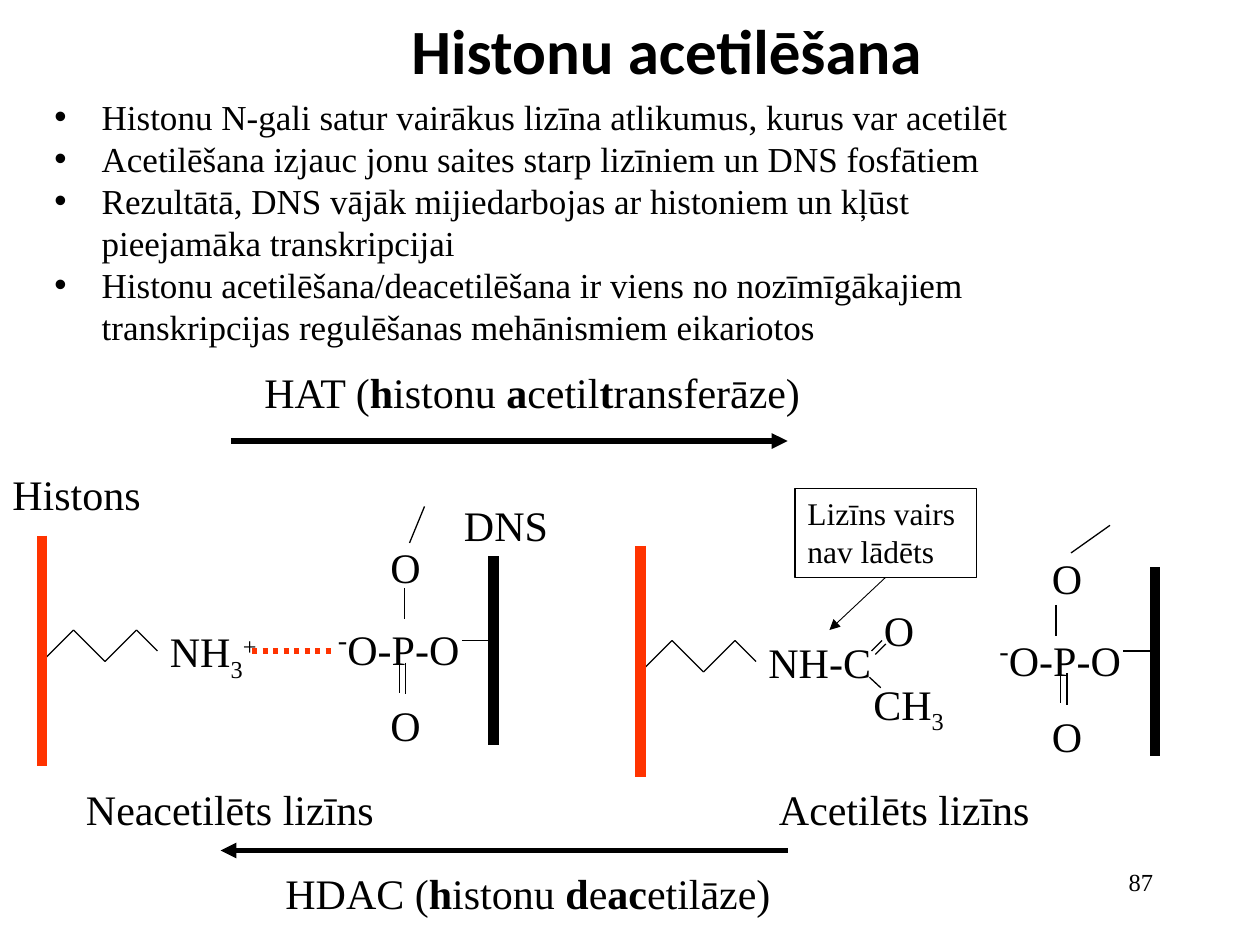
"""Build the slide on histone acetylation and deacetylation."""
from dataclasses import dataclass
from itertools import pairwise

from lxml import etree
from pptx import Presentation
from pptx.dml.color import RGBColor
from pptx.enum import dml, shapes, text
from pptx.oxml import ns
from pptx.util import Pt

COLORS = {"ink": "000000", "histone": "FF3300"}
SERIF = "Times New Roman"


@dataclass(frozen=True)
class Span:
    text: str
    bold: bool = False
    baseline: int = 0
    size: float | None = None


@dataclass(frozen=True)
class Paragraph:
    spans: tuple[Span, ...]
    left: float = 0
    hanging: float = 0
    before: float = 0


@dataclass(frozen=True)
class Label:
    box: tuple[float, float, float, float]
    spans: tuple[Span, ...]


@dataclass(frozen=True)
class Bond:
    start: tuple[float, float]
    end: tuple[float, float]


@dataclass(frozen=True)
class Phosphate:
    dx: float
    dy: float
    upper_bond: Bond
    backbone_bond: Bond


def plain(words: str) -> tuple[Span, ...]:
    return (Span(words),)


def emphasised(words: str) -> tuple[Span, ...]:
    """Split on asterisks, making every second piece bold."""
    return tuple(Span(piece, bold=i % 2 == 1) for i, piece in enumerate(words.split("*")))


def write(frame, paragraphs, *, size=24, font=SERIF, bold=False,
          align=text.PP_ALIGN.LEFT, anchor=text.MSO_ANCHOR.TOP) -> None:
    """Fill a text frame with formatted paragraphs."""
    frame.word_wrap = True
    frame.vertical_anchor = anchor
    for i, item in enumerate(paragraphs):
        paragraph = frame.add_paragraph() if i else frame.paragraphs[0]
        properties = paragraph._p.get_or_add_pPr()
        if item.left:
            properties.set("marL", str(Pt(item.left)))
        if item.hanging:
            properties.set("indent", str(-Pt(item.hanging)))
            etree.SubElement(properties, ns.qn("a:buFont"), typeface="Arial")
            etree.SubElement(properties, ns.qn("a:buChar"), char="•")
        paragraph.alignment = align
        paragraph.space_before = Pt(item.before)
        for span in item.spans:
            run = paragraph.add_run()
            run.text = span.text
            run.font.name = font
            run.font.size = Pt(span.size or size)
            run.font.bold = bold or span.bold
            run.font.color.rgb = RGBColor.from_string(COLORS["ink"])
            if span.baseline:
                run._r.get_or_add_rPr().set("baseline", str(span.baseline * 1000))


def add_text(slide, box, paragraphs, **format_options) -> None:
    textbox = slide.shapes.add_textbox(*map(Pt, box))
    write(textbox.text_frame, paragraphs, **format_options)


def add_line(slide, bond: Bond, width: float = 0.75, color: str = "ink",
             dotted: bool = False, arrow: bool = False) -> None:
    connector = slide.shapes.add_connector(
        shapes.MSO_CONNECTOR.STRAIGHT, *map(Pt, (*bond.start, *bond.end)))
    connector.line.width = Pt(width)
    connector.line.color.rgb = RGBColor.from_string(COLORS[color])
    if dotted:
        connector.line.dash_style = dml.MSO_LINE.ROUND_DOT
    if arrow:
        etree.SubElement(connector.line._get_or_add_ln(), ns.qn("a:tailEnd"), type="triangle")
    etree.SubElement(connector._element.spPr, ns.qn("a:effectLst"))


def add_histone(slide, dx: float, dy: float) -> None:
    """Draw the histone bar and its zigzag lysine side chain."""
    chain = [(24, 378), (42, 360), (60, 378), (78, 360), (90, 372)]
    for start, end in pairwise((x + dx, y + dy) for x, y in chain):
        add_line(slide, Bond(start, end))
    add_line(slide, Bond((24 + dx, 306 + dy), (24 + dx, 438 + dy)), 6, "histone")


def add_phosphate(slide, phosphate: Phosphate) -> None:
    """Draw a phosphate group joined to the DNA bar."""
    dx, dy = phosphate.dx, phosphate.dy
    oxygen = plain("O")
    add_text(slide, (186 + dx, 306 + dy, 156, 122), [
        Paragraph(oxygen, left=30),
        Paragraph((Span("-", baseline=30, size=28), Span("O-P-O")), before=14),
        Paragraph(oxygen, left=30, before=14),
    ])
    add_line(slide, phosphate.upper_bond)
    add_line(slide, phosphate.backbone_bond)
    for x, y in ((228.2, 378), (231.8, 378.7)):
        add_line(slide, Bond((x + dx, y + dy), (x + dx, y + dy + 18)))
    add_line(slide, Bond((264 + dx, 366 + dy), (282 + dx, 366 + dy)))
    add_line(slide, Bond((282 + dx, 318 + dy), (282 + dx, 426 + dy)), 6)


HISTONE_OFFSETS = [(0, 0), (342, 6)]
PHOSPHATES = [
    Phosphate(0, 0, Bond((231, 336), (231, 354)), Bond((242.6, 289.4), (234, 310.3))),
    Phosphate(378, 6, Bond((603.4, 345.6), (603.4, 363.6)), Bond((634.3, 300.2), (612, 316))),
]
ACETYL_BONDS = [
    Bond((496.8, 387), (503.3, 393)),
    Bond((504, 366), (498, 372)),
    Bond((506.2, 368), (500.2, 374)),
]
LABELS = [
    Label((90, 354, 84, 36), (Span("NH"), Span("3", baseline=-25), Span("+", baseline=30))),
    Label((432, 360, 84, 36), plain("NH-C")),
    Label((498, 342, 42, 36), plain("O")),
    Label((492, 384, 58, 36), (Span("CH"), Span("3", baseline=-25))),
    Label((42, 444, 228, 36), plain("Neacetilēts lizīns")),
    Label((438, 444, 204, 36), plain("Acetilēts lizīns")),
    Label((0, 264, 108, 36), plain("Histons")),
    Label((258, 282, 84, 36), plain("DNS")),
    Label((144, 206, 325, 36), emphasised("HAT (*h*istonu *a*cetil*t*ransferāze)")),
    Label((156, 492, 313, 36), emphasised("HDAC (*h*istonu *d*e*ac*etilāze)")),
]
FACTS = [
    "Histonu N-gali satur vairākus lizīna atlikumus, kurus var acetilēt",
    "Acetilēšana izjauc jonu saites starp lizīniem un DNS fosfātiem",
    "Rezultātā, DNS vājāk mijiedarbojas ar histoniem un kļūst pieejamāka transkripcijai",
    "Histonu acetilēšana/deacetilēšana ir viens no nozīmīgākajiem "
    "transkripcijas regulēšanas mehānismiem eikariotos",
]


def main() -> None:
    deck = Presentation()
    deck.slide_width, deck.slide_height = Pt(720), Pt(540)
    slide = deck.slides.add_slide(deck.slide_layouts[5])

    heading = slide.shapes.title
    heading.left, heading.top, heading.width, heading.height = map(Pt, (33, -17, 696, 90))
    write(heading.text_frame, [Paragraph(plain("Histonu acetilēšana"))], size=36,
          font="Calibri", bold=True, align=text.PP_ALIGN.CENTER,
          anchor=text.MSO_ANCHOR.MIDDLE)

    for dx, dy in HISTONE_OFFSETS:
        add_histone(slide, dx, dy)
    for phosphate in PHOSPHATES:
        add_phosphate(slide, phosphate)
    for bond in ACETYL_BONDS:
        add_line(slide, bond)
    add_line(slide, Bond((144, 372), (192, 372)), 3, "histone", dotted=True)
    for label in LABELS:
        add_text(slide, label.box, [Paragraph(label.spans)])

    add_line(slide, Bond((132, 252), (450, 252)), 3, arrow=True)
    add_line(slide, Bond((450, 486), (126, 486)), 3, arrow=True)
    add_text(slide, (24, 51, 587, 153),
             [Paragraph(plain(fact), left=27, hanging=27) for fact in FACTS], size=20)

    add_line(slide, Bond((506, 330), (474, 360)), 0.5, arrow=True)
    callout = slide.shapes.add_shape(
        shapes.MSO_SHAPE.RECTANGLE, *map(Pt, (454.3, 279, 103.7, 51)))
    callout.shadow.inherit = False
    callout.fill.background()
    callout.line.width = Pt(0.75)
    callout.line.color.rgb = RGBColor.from_string(COLORS["ink"])
    write(callout.text_frame, [Paragraph(plain("Lizīns vairs nav lādēts"))], size=18)
    add_text(slide, (516, 492, 150, 36), [Paragraph(plain("87"))], size=14,
             align=text.PP_ALIGN.RIGHT)
    deck.save("out.pptx")


if __name__ == "__main__":
    main()
